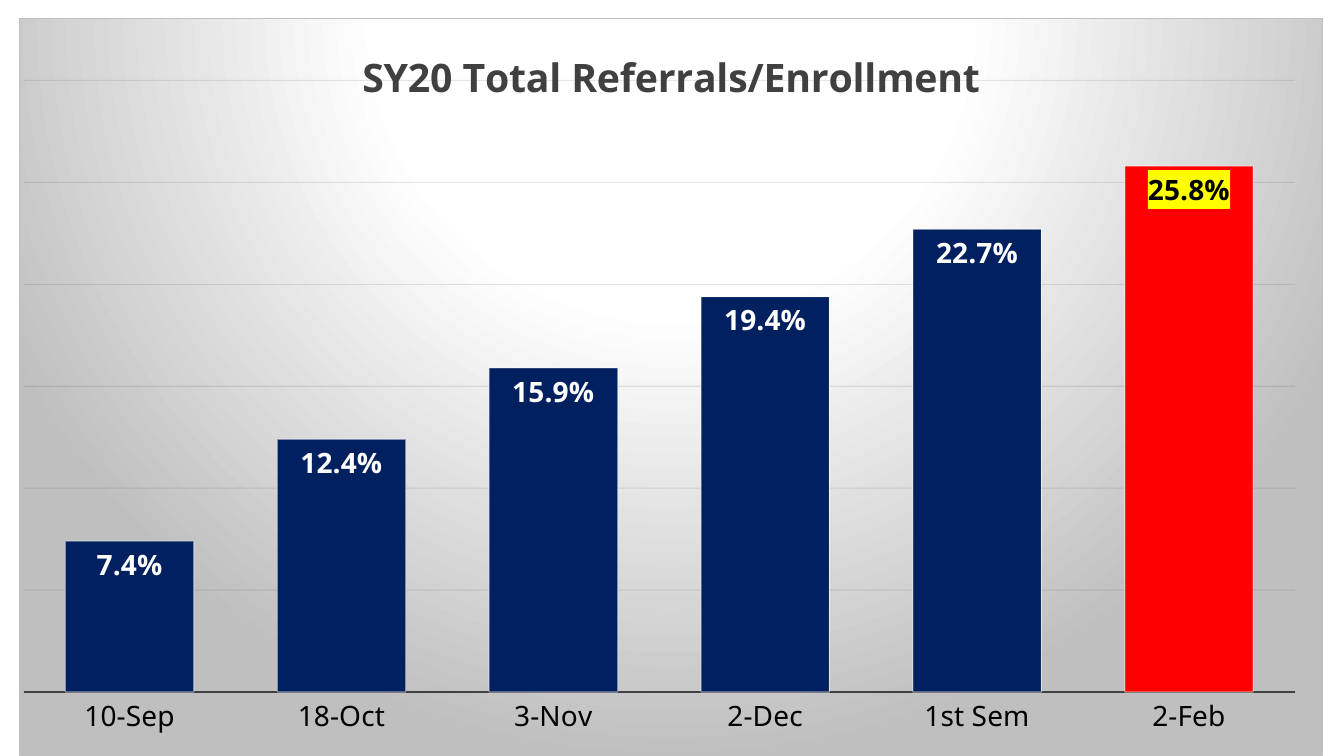
from dataclasses import dataclass
from typing import Optional

from lxml import etree
from pptx import Presentation
from pptx.chart.data import CategoryChartData
from pptx.dml.color import RGBColor
from pptx.enum.chart import XL_CHART_TYPE as ChartType
from pptx.enum.chart import XL_LABEL_POSITION as LabelPos
from pptx.enum.chart import XL_TICK_LABEL_POSITION as TickLabelPos
from pptx.enum.chart import XL_TICK_MARK as TickMark
from pptx.oxml import parse_xml
from pptx.oxml.ns import nsdecls, qn
from pptx.util import Inches, Pt

FONT = "Noto Sans"
TITLE = "SY20 Total Referrals/Enrollment"
PERCENT = "0.0%"
NAVY, RED, YELLOW = "002060", "FF0000", "FFFF00"
WHITE, BLACK, DARK, SILVER = "FFFFFF", "000000", "404040", "BFBFBF"
GRID_LINE = "0D0D0D"
NS = nsdecls("c", "a")


@dataclass
class Bar:
    label: str
    rate: float
    fill: str = NAVY
    text: str = WHITE
    highlight: Optional[str] = None


BARS = [
    Bar("10-Sep", 0.074),
    Bar("18-Oct", 0.124),
    Bar("3-Nov", 0.159),
    Bar("2-Dec", 0.194),
    Bar("1st Sem", 0.227),
    Bar("2-Feb", 0.258, RED, BLACK, YELLOW),
]


def rgb(color: str) -> RGBColor:
    return RGBColor.from_string(color)


def style_font(font, size: float, color: str, bold: bool = False) -> None:
    font.name, font.size, font.bold = FONT, Pt(size), bold
    font.color.rgb = rgb(color)


def style_line(fmt, color: str, width: float = 0.75, opacity: int = 100) -> None:
    fmt.line.width = Pt(width)
    fmt.line.color.rgb = rgb(color)
    if opacity < 100:
        clr = fmt.line._get_or_add_ln().find(".//" + qn("a:srgbClr"))
        etree.SubElement(clr, qn("a:alpha")).set("val", str(opacity * 1000))


def fill_chart_area(chart) -> None:
    stops = "".join(
        f'<a:gs pos="{pos * 1000}"><a:srgbClr val="{color}"/></a:gs>'
        for pos, color in ((0, WHITE), (39, WHITE), (100, SILVER)))
    chart._chartSpace.find(qn("c:chart")).addnext(parse_xml(
        f'<c:spPr {NS}><a:gradFill><a:gsLst>{stops}</a:gsLst>'
        '<a:path path="circle">'
        '<a:fillToRect l="50000" t="-80000" r="50000" b="180000"/>'
        '</a:path></a:gradFill><a:ln w="9525"><a:solidFill>'
        f'<a:srgbClr val="{SILVER}"/></a:solidFill></a:ln></c:spPr>'))


def place_plot(chart, x: float, y: float, w: float, h: float) -> None:
    plot_area = chart._chartSpace.find(".//" + qn("c:plotArea"))
    for old in plot_area.findall(qn("c:layout")):
        plot_area.remove(old)
    shares = "".join(f'<c:{k} val="{v}"/>'
                     for k, v in zip("xywh", (x, y, w, h)))
    plot_area.insert(0, parse_xml(
        f'<c:layout {NS}><c:manualLayout><c:layoutTarget val="inner"/>'
        '<c:xMode val="edge"/><c:yMode val="edge"/>'
        f'{shares}</c:manualLayout></c:layout>'))


def highlight_label(series, index: int, bar: Bar) -> None:
    label = series.points[index].data_label
    style_font(label.font, 20, bar.text, True)
    label.position = LabelPos.INSIDE_END
    tx_pr = series._element.find(f".//{qn('c:dLbl')}/{qn('c:txPr')}")
    tx_pr.addprevious(parse_xml(
        f'<c:numFmt {NS} formatCode="{PERCENT}" sourceLinked="0"/>'))
    tx_pr.addprevious(parse_xml(
        f'<c:spPr {NS}><a:solidFill><a:srgbClr val="{bar.highlight}"/>'
        '</a:solidFill></c:spPr>'))


prs = Presentation()
prs.slide_width, prs.slide_height = Inches(13.33), Inches(7.5)
W, H = prs.slide_width, prs.slide_height
s = prs.slides.add_slide(prs.slide_layouts[6])

# Chart data and frame
data = CategoryChartData(number_format=PERCENT)
data.categories = [bar.label for bar in BARS]
data.add_series(TITLE, [bar.rate for bar in BARS])
left, top, width, height = (round(W * 0.0143), round(H * 0.024),
                            round(W * 0.97), round(H * 0.976))
chart = s.shapes.add_chart(ChartType.COLUMN_CLUSTERED, left, top,
                           width, height, data).chart
style_font(chart.font, 10, BLACK)
chart.has_legend = False
fill_chart_area(chart)
place_plot(chart, 0.003, 0.084, 0.976, 0.83)

# Title
chart.has_title = True
p = chart.chart_title.text_frame.paragraphs[0]
r = p.add_run()
r.text = TITLE
style_font(r.font, 28, DARK, True)

# Axes
cat_axis, val_axis = chart.category_axis, chart.value_axis
cat_axis.major_tick_mark = cat_axis.minor_tick_mark = TickMark.NONE
cat_axis.tick_label_position = TickLabelPos.NEXT_TO_AXIS
style_font(cat_axis.tick_labels.font, 20, BLACK)
style_line(cat_axis.format, DARK, 1.5)
val_axis.minimum_scale, val_axis.maximum_scale = 0, 0.3
val_axis.major_unit = 0.05
val_axis.has_major_gridlines = True
style_line(val_axis.major_gridlines.format, GRID_LINE, opacity=10)
val_axis.tick_labels.number_format = PERCENT
val_axis.tick_labels.number_format_is_linked = False
val_axis.visible = False

# Columns and their labels
plot = chart.plots[0]
plot.gap_width = 65
plot.vary_by_categories = False
series = plot.series[0]
series.format.fill.solid()
series.format.fill.fore_color.rgb = rgb(NAVY)
style_line(series.format, WHITE, opacity=50)
labels = series.data_labels
labels.show_value = True
labels.position = LabelPos.INSIDE_END
labels.number_format, labels.number_format_is_linked = PERCENT, False
style_font(labels.font, 20, WHITE, True)
for i, bar in enumerate(BARS):
    if bar.highlight:
        fmt = series.points[i].format
        fmt.fill.solid()
        fmt.fill.fore_color.rgb = rgb(bar.fill)
        style_line(fmt, WHITE, opacity=50)
        highlight_label(series, i, bar)

prs.save("out.pptx")
